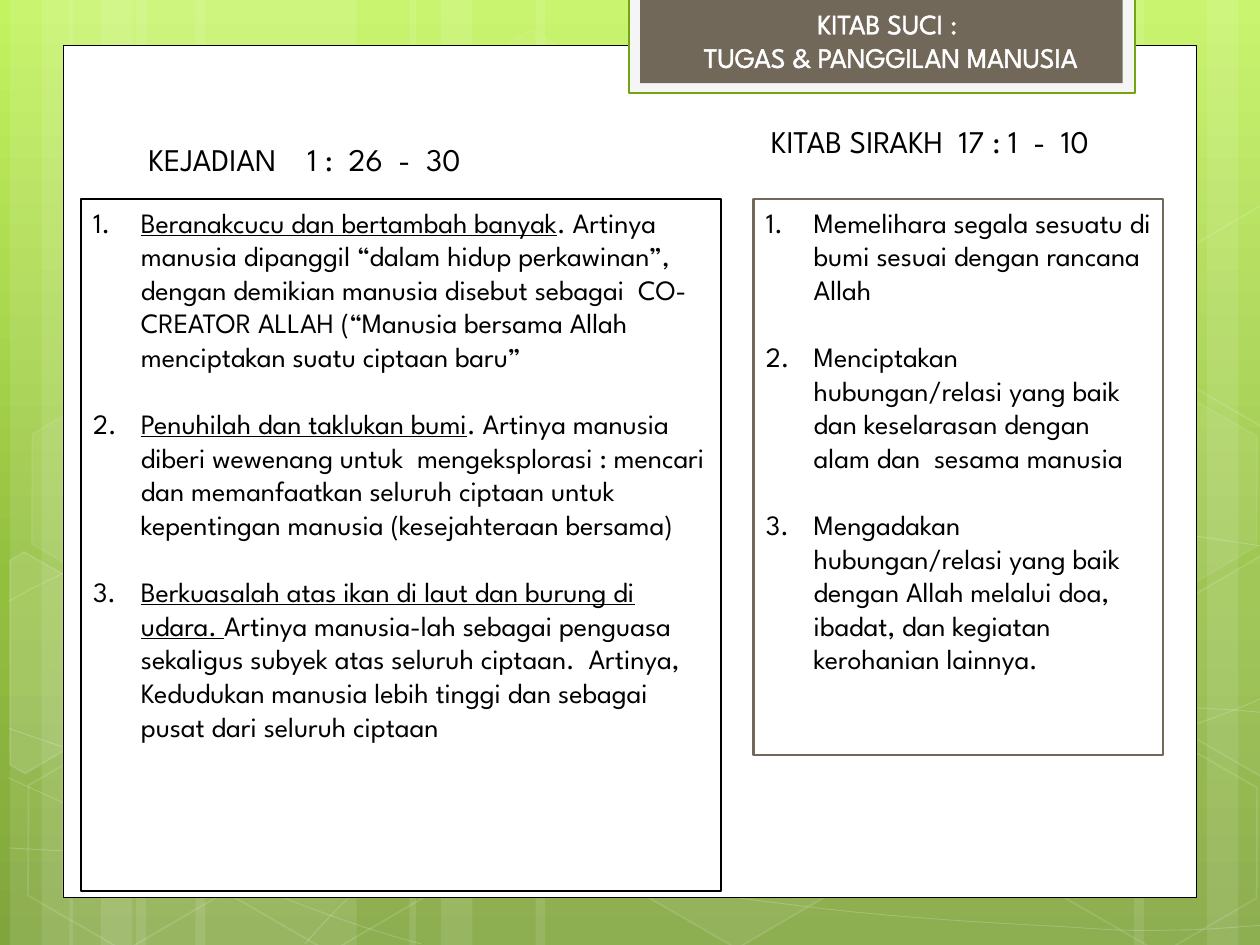
from copy import deepcopy
from pptx import Presentation
from pptx import util as u
from pptx.dml.color import RGBColor
from pptx.enum import shapes, text
from pptx.oxml.ns import qn
from lxml import etree

Inches, Pt = u.Inches, u.Pt
COLORS = {"white": "FFFFFF", "black": "000000", "brown": "71685A", "frame": "F5F5F5",
          "green": "74A510", "top": "C3F35F", "middle": "93BF3F", "bottom": "81A53E"}
FONT = "League Spartan"


def paint(sp, fill=None, line=None, width=1.25, fill_alpha=100, line_alpha=100):
    """Set fill and line, each with its opacity in percent."""
    sp.shadow.inherit = False
    for target, color, alpha in ((sp.fill, fill, fill_alpha), (sp.line.fill, line, line_alpha)):
        if color is None:
            target.background()
            continue
        target.solid()
        target.fore_color.rgb = RGBColor.from_string(COLORS[color])
        if alpha < 100:
            holder = sp.line._ln if target is sp.line.fill else sp._element.spPr
            clr = holder.find(qn("a:solidFill")).find(qn("a:srgbClr"))
            etree.SubElement(clr, qn("a:alpha")).set("val", str(alpha * 1000))
    if line:
        sp.line.width = Pt(width)


def add_run(p, words, size, color="black", underline=False):
    r = p.add_run()
    r.text = words
    r.font.name, r.font.size = FONT, Pt(size)
    r.font.color.rgb = RGBColor.from_string(COLORS[color])
    if underline:
        r.font.underline = True
    return r


prs = Presentation()
prs.slide_width, prs.slide_height = Inches(10), Inches(7.5)
s = prs.slides.add_slide(prs.slide_layouts[5])
RECT = shapes.MSO_SHAPE.RECTANGLE

# Background gradient
bg = s.background.fill
bg.gradient()
bg.gradient_angle = 270
stop_list = next(s._element.iter(qn("a:gsLst")))
stop_list.insert(1, deepcopy(stop_list[0]))
for stop, color, position in zip(bg.gradient_stops, ("top", "middle", "bottom"), (0, 0.62, 1)):
    stop.color.rgb = RGBColor.from_string(COLORS[color])
    stop.position = position

# Translucent vertical bands: left, width
bands = [(1.08, 1.75), (0.08, 0.5), (0.33, 0.83), (1.55, 1.75), (0.55, 0.5), (0.8, 0.83),
         (7.33, 1.75), (9.58, 0.5), (9, 0.83), (4.25, 3.08), (3.25, 0.5), (3.5, 0.83)]
for left, width in bands:
    sp = s.shapes.add_shape(RECT, Inches(left), 0, Inches(width), prs.slide_height)
    paint(sp, "white", fill_alpha=10)

# Thin curves: start point, then Bezier segments (two controls and an end)
curves = [
    ((0.07, 6.73), [(0.61, 6.76, 1.15, 6.79, 1.9, 6.78), (2.65, 6.77, 3.58, 6.75, 4.58, 6.65),
                    (5.58, 6.55, 7, 6.36, 7.92, 6.17), (8.83, 5.98, 9.77, 5.68, 10.07, 5.51)]),
    ((0.07, 4.77), [(0.36, 4.61, 0.65, 4.46, 1.21, 4.31), (1.78, 4.16, 2.59, 3.94, 3.47, 3.87),
                    (4.36, 3.8, 5.44, 3.79, 6.54, 3.87), (7.64, 3.95, 9.47, 4.26, 10.07, 4.34)]),
    ((0.06, 6.17), [(1.27, 6.72, 2.47, 7.27, 3.34, 7.49)]),
    ((0.07, 5.78), [(0.38, 5.89, 0.7, 6, 1.28, 6.16), (1.86, 6.31, 2.73, 6.56, 3.57, 6.73),
                    (4.4, 6.9, 5.45, 7.08, 6.28, 7.18), (7.11, 7.29, 8, 7.33, 8.53, 7.36),
                    (9.05, 7.4, 9.19, 7.38, 9.45, 7.38), (9.71, 7.37, 9.89, 7.35, 10.07, 7.34)]),
    ((2.42, 7.49), [(2.6, 7.29, 2.78, 7.09, 3.02, 6.91), (3.26, 6.73, 3.6, 6.53, 3.88, 6.39),
                    (4.16, 6.25, 4.33, 6.19, 4.7, 6.09), (5.06, 5.99, 5.73, 5.85, 6.08, 5.78),
                    (6.44, 5.71, 6.49, 5.71, 6.8, 5.69), (7.11, 5.66, 7.6, 5.63, 7.94, 5.62),
                    (8.29, 5.61, 8.86, 5.62, 8.86, 5.62), (9.53, 5.62),
                    (9.71, 5.63, 9.88, 5.64, 9.97, 5.65), (10.06, 5.66, 10.03, 5.65, 10.06, 5.66)]),
]
for start, segments in curves:
    builder = s.shapes.build_freeform(*map(Inches, start))
    for segment in segments:
        lengths = [Inches(v) for v in segment]
        builder.add_line_segments(list(zip(lengths[::2], lengths[1::2])), close=False)
    sp = builder.convert_to_shape()
    # Join each run of three line points into one Bezier segment
    lines = iter(list(sp._element.iter(qn("a:lnTo"))))
    for segment in segments:
        nodes = [next(lines) for _ in segment[::2]]
        if len(nodes) == 3:
            bezier = etree.Element(qn("a:cubicBezTo"))
            nodes[0].addprevious(bezier)
            for node in nodes:
                bezier.append(node[0])
                node.getparent().remove(node)
    paint(sp, line="white", width=0.5, line_alpha=20)

# Hexagons: left, top, fill opacity, line opacity
hexagons = [(3.34, 0.36, 4, 8), (4.97, 5.89, 6, 12), (0.11, 5.91, 0, 12), (0.14, 3.12, 7, 8),
            (1.74, 5.92, 0, 12), (7.53, 4.53, 10, 12), (8.34, 5.93, 0, 12), (8.34, 3.14, 7, 8)]
for left, top, fill_alpha, line_alpha in hexagons:
    sp = s.shapes.add_shape(shapes.MSO_SHAPE.HEXAGON, Inches(left), Inches(top),
                            Inches(1.75), Inches(1.52))
    sp.adjustments[0] = 0.285
    sp.rotation = 30
    paint(sp, "white" if fill_alpha else None, "white", 1, fill_alpha, line_alpha)

# Hexagons cut off by the slide edges: corners, fill opacity
cut_hexagons = [
    ([(0.08, 4.45), (0.19, 4.38), (0.96, 4.82), (0.95, 5.7), (0.2, 6.14), (0.08, 6.07)], 10),
    ([(9.26, 4.85), (10.01, 4.41), (10.09, 4.46), (10.09, 6.13), (10.02, 6.17), (9.26, 5.73)], 4),
    ([(9.26, 2.07), (10.01, 1.63), (10.1, 1.68), (10.09, 3.35), (10.02, 3.39), (9.26, 2.95)], 0),
]
for corners, fill_alpha in cut_hexagons:
    first, *rest = [(Inches(x), Inches(y)) for x, y in corners]
    builder = s.shapes.build_freeform(*first)
    builder.add_line_segments(rest, close=True)
    paint(builder.convert_to_shape(), "white" if fill_alpha else None, "white", 1, fill_alpha, 12)

# White page and title tab
for box, fill, line, width in [((0.5, 0.36, 9, 6.76), "white", "black", 0.5),
                               ((4.99, -0.02, 4.02, 0.76), "frame", "green", 1.25),
                               ((5.08, -0.02, 3.83, 0.68), "brown", None, 0)]:
    sp = s.shapes.add_shape(RECT, *map(Inches, box))
    paint(sp, fill, line, width)

# Title, brought in front of its tab
title = s.shapes.title
s.shapes._spTree.append(title._element)
title.left, title.top, title.width, title.height = map(Inches, (5.25, 0, 3.64, 0.64))
tf = title.text_frame
tf.word_wrap = True
tf.vertical_anchor = text.MSO_ANCHOR.TOP
for i, words in enumerate(["KITAB SUCI : ", "TUGAS & PANGGILAN MANUSIA"]):
    p = tf.paragraphs[0] if i == 0 else tf.add_paragraph()
    p.alignment = text.PP_ALIGN.CENTER
    r = add_run(p, words, 16, "white")
    outline = etree.Element(qn("a:ln"), w=str(Pt(1.45)))
    color = etree.SubElement(etree.SubElement(outline, qn("a:solidFill")), qn("a:srgbClr"))
    color.set("val", COLORS["white"])
    r.font._element.insert(0, outline)

# Column headings
for left, top, words in [(1.08, 1.06, "KEJADIAN    1 :  26  -  30"),
                         (6.02, 0.92, "KITAB SIRAKH  17 : 1  -  10")]:
    tf = s.shapes.add_textbox(Inches(left), Inches(top), Inches(3.17), Inches(0.4)).text_frame
    tf.word_wrap = True
    add_run(tf.paragraphs[0], words, 18)

# Numbered panels: box, line colour, items of (underlined, plain) text
panels = [
    ((0.64, 1.58, 5.08, 5.49), "black", [
        ("Beranakcucu dan bertambah banyak",
         ". Artinya manusia dipanggil “dalam hidup perkawinan”, dengan demikian manusia disebut "
         "sebagai  CO-CREATOR ALLAH (“Manusia bersama Allah menciptakan suatu ciptaan baru”"),
        ("Penuhilah dan taklukan bumi",
         ". Artinya manusia diberi wewenang untuk  mengeksplorasi : mencari dan memanfaatkan "
         "seluruh ciptaan untuk kepentingan manusia (kesejahteraan bersama)"),
        ("Berkuasalah atas ikan di laut dan burung di udara. ",
         "Artinya manusia-lah sebagai penguasa sekaligus subyek atas seluruh ciptaan.  Artinya, "
         "Kedudukan manusia lebih tinggi dan sebagai pusat dari seluruh ciptaan")]),
    ((5.98, 1.58, 3.25, 4.41), "brown", [
        ("", "Memelihara segala sesuatu di bumi sesuai dengan rancana Allah"),
        ("", "Menciptakan hubungan/relasi yang baik dan keselarasan dengan alam dan  "
             "sesama manusia"),
        ("", "Mengadakan hubungan/relasi yang baik dengan Allah melalui doa, ibadat, dan "
             "kegiatan kerohanian lainnya.")]),
]
for box, line, items in panels:
    sp = s.shapes.add_shape(RECT, *map(Inches, box))
    paint(sp, "white", line)
    tf = sp.text_frame
    tf.word_wrap = True
    tf.margin_right = Inches(0.08)
    tf.vertical_anchor = text.MSO_ANCHOR.TOP
    for i, (lead, rest) in enumerate(items):
        p = tf.paragraphs[0] if i == 0 else tf.add_paragraph()
        p.alignment = text.PP_ALIGN.LEFT
        if i:
            p.space_before = Pt(19.2)
        pPr = p._p.get_or_add_pPr()
        pPr.set("marL", str(Inches(0.38)))
        pPr.set("indent", str(Inches(-0.38)))
        etree.SubElement(pPr, qn("a:buAutoNum")).set("type", "arabicPeriod")
        if lead:
            add_run(p, lead, 16, underline=True)
        add_run(p, rest, 16)

prs.save("out.pptx")
